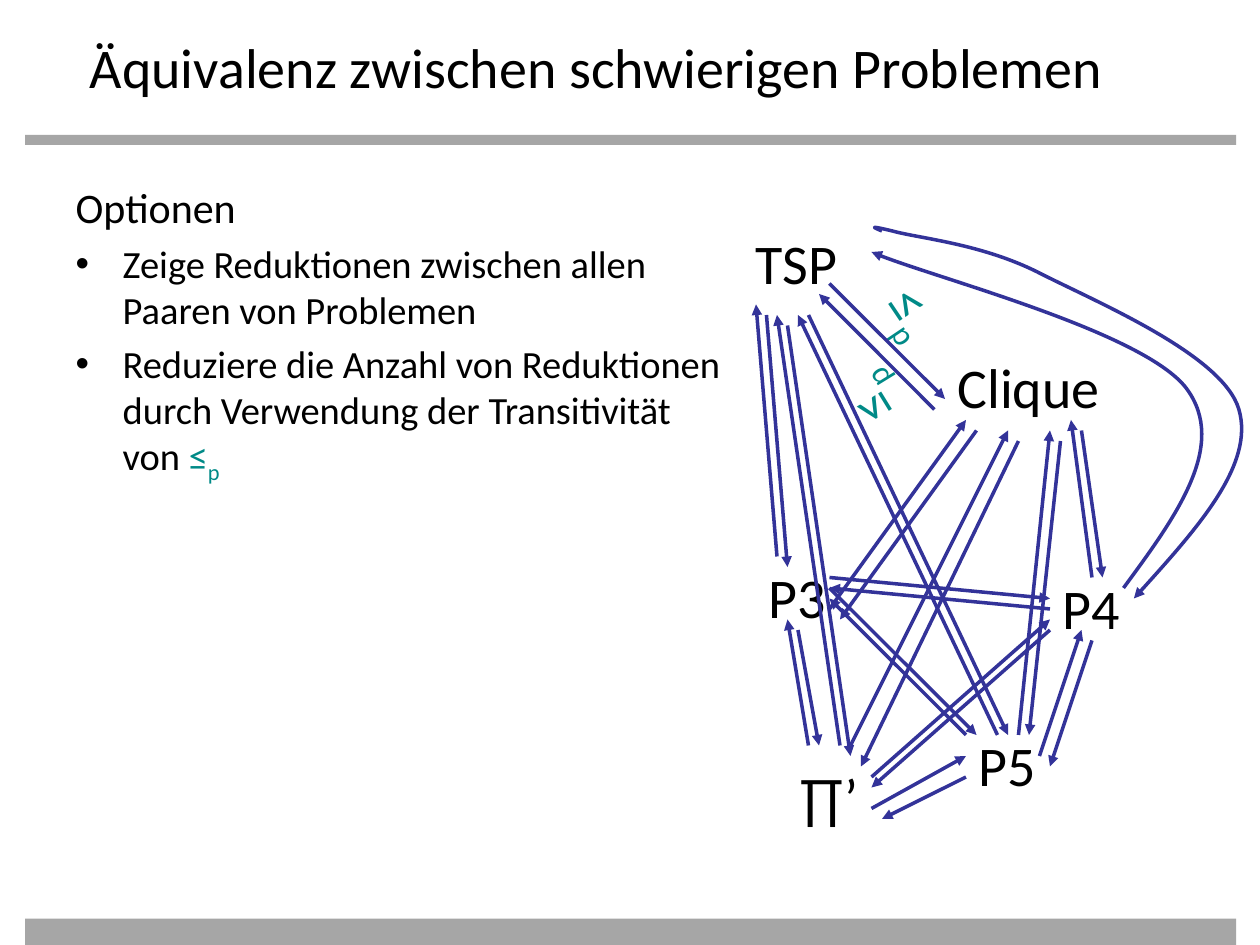
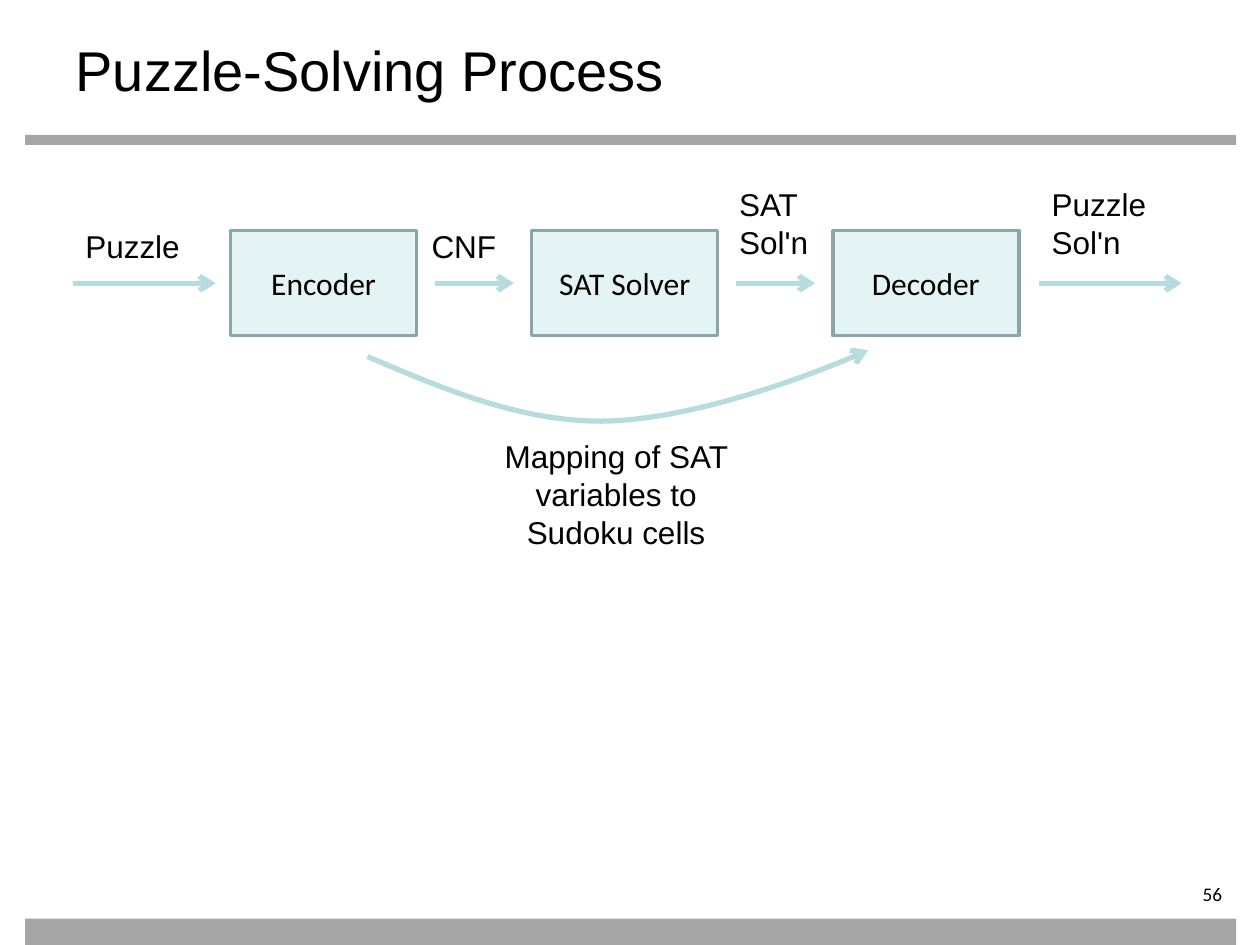
from pptx import Presentation
from pptx.dml.color import RGBColor
from pptx.enum import shapes, text
from pptx.oxml import ns, xmlchemy
from pptx.util import Cm, Pt

BLACK, GREY, NAVY, TEAL = "000000", "A6A6A6", "333399", "008A87"
STAGE_FILL, STAGE_EDGE, FLOW = "E4F3F4", "8AA6A8", "B6DCDF"
SANS, HUMANIST = "Arial", "Calibri"
GRID = 2.54 / 12  # cm per step of the reduction graph

# Label, left, top, width in grid steps
PROBLEMS = [
    ("TSP", -1.2, 3.2, 10.6), ("P3", 0, 35, 8), ("P4", 28, 36, 8),
    ("Clique", 18, 15, 16.7), ("P5", 20, 51, 8), ("∏’", 3, 54, 8.6),
]
# Left, top, width, rotation
RELATION_SIGNS = [(10.9, 9.7, 11.4, 56.1), (4.4, 15, 10.1, 238.4)]
# Each reduction: from x, y to x, y; listed with its reverse
REDUCTIONS = [
    (7, 9, 18, 20), (17, 21, 6, 10),
    (7, 40, 20, 22), (21, 23, 8, 41),
    (23, 52, 4, 12), (5, 12, 24, 52),
    (8, 53, 2, 12), (3, 13, 9, 54),
    (9, 53, 24, 23), (25, 24, 10, 55),
    (25, 52, 28, 23), (29, 24, 26, 52),
    (32, 37, 30, 22), (31, 23, 33, 37),
    (11, 59, 20, 54), (20, 56, 12, 60),
    (11, 56, 28, 41), (28, 42, 11, 57),
    (27, 54, 31, 42), (32, 43, 28, 55),
    (2, 35, 0, 11), (1, 12, 3, 36),
    (5, 53, 3, 41), (4, 42, 6, 53),
    (7, 38, 21, 52), (20, 52, 7, 39),
    (7, 37, 28, 39), (28, 40, 7, 38),
]
CURVED_REDUCTIONS = [
    [(35, 38), (40, 31.2), (45, 24.4), (41, 19),
     (37, 13.7), (16, 8.2), (11, 6)],
    [(12, 4), (11.3, 3.7), (10.5, 3.4), (13, 4),
     (15.5, 4.7), (21.5, 5.2), (27, 8),
     (32.5, 10.8), (44.5, 15.8), (46, 21),
     (47.5, 26.2), (41.8, 32.6), (36, 39)],
]


def colour(value):
    return RGBColor.from_string(value)


def format_font(font, size, name, value=BLACK):
    font.size, font.name = Pt(size), name
    font.color.rgb = colour(value)


def place(shape, left, top, width, height):
    shape.left, shape.top = Cm(left), Cm(top)
    shape.width, shape.height = Cm(width), Cm(height)


def subscript(span):
    span._r.get_or_add_rPr().set("baseline", "-25000")


def add_box(page, left, top, width, height, fill, edge=None):
    box = page.shapes.add_shape(shapes.MSO_SHAPE.RECTANGLE, Cm(left), Cm(top),
                                Cm(width), Cm(height))
    box.shadow.inherit = False
    box.fill.solid()
    box.fill.fore_color.rgb = colour(fill)
    if edge:
        box.line.color.rgb = colour(edge)
        box.line.width = Pt(2)
    else:
        box.line.fill.background()
    return box


def add_label(page, words, left, top, width, height, size, name,
              value=BLACK, align=text.PP_ALIGN.LEFT, wrap=True):
    label = page.shapes.add_textbox(Cm(left), Cm(top), Cm(width), Cm(height))
    frame = label.text_frame
    frame.word_wrap = wrap
    frame.text = words
    para = frame.paragraphs[0]
    para.alignment = align
    format_font(para.runs[0].font, size, name, value)
    return label


def style_arrow(line, properties, value, width, head):
    line.color.rgb = colour(value)
    line.width = Pt(width)
    tail = xmlchemy.OxmlElement("a:tailEnd")
    tail.set("type", head)
    properties.find(ns.qn("a:ln")).append(tail)


def add_arrow(page, start, end, value, width, head):
    arrow = page.shapes.add_connector(shapes.MSO_CONNECTOR.STRAIGHT,
                                      *map(Cm, (*start, *end)))
    properties = arrow._element.spPr
    style_arrow(arrow.line, properties, value, width, head)
    properties.append(xmlchemy.OxmlElement("a:effectLst"))


def add_curved_arrow(page, points, value, width, head):
    """Draw a chain of cubic curves: a start, then three points per curve."""
    start, *rest = [(Cm(x), Cm(y)) for x, y in points]
    builder = page.shapes.build_freeform(*start)
    builder.add_line_segments(rest, close=False)
    curve = builder.convert_to_shape()
    curve.shadow.inherit = False
    curve.fill.background()
    properties = curve._element.spPr
    outline = next(properties.iter(ns.qn("a:path")))
    segments = outline.findall(ns.qn("a:lnTo"))
    for first in range(0, len(segments), 3):
        bend = xmlchemy.OxmlElement("a:cubicBezTo")
        for segment in segments[first:first + 3]:
            bend.append(segment[0])
            outline.remove(segment)
        outline.append(bend)
    style_arrow(curve.line, properties, value, width, head)


def start_page(deck, layout, title, name, box):
    """Add a page with its two grey bands and its title."""
    page = deck.slides.add_slide(deck.slide_layouts[layout])
    for top, height in ((2.72, 0.2), (18.52, 0.53)):
        add_box(page, 0.51, top, 24.41, height, GREY)
    heading = page.shapes.title
    place(heading, *box)
    frame = heading.text_frame
    frame.text = title
    frame.auto_size = text.MSO_AUTO_SIZE.NONE
    frame.vertical_anchor = text.MSO_ANCHOR.TOP
    para = frame.paragraphs[0]
    para.alignment = text.PP_ALIGN.LEFT
    format_font(para.runs[0].font, 32, name)
    return page


def set_bullet(para, symbol):
    properties = para._p.get_or_add_pPr()
    indent = Cm(0.95) if symbol else 0
    properties.set("marL", str(indent))
    properties.set("indent", str(-indent))
    bullet = xmlchemy.OxmlElement("a:buChar" if symbol else "a:buNone")
    if symbol:
        bullet.set("char", symbol)
    properties.append(bullet)


def fill_options(body, left, top, width, height):
    place(body, left, top, width, height)
    frame = body.text_frame
    frame.text = "\n".join([
        "Optionen",
        "Zeige Reduktionen zwischen allen Paaren von Problemen",
        "Reduziere die Anzahl von Reduktionen durch Verwendung der "
        "Transitivität von ",
    ])
    frame.auto_size = text.MSO_AUTO_SIZE.NONE
    for number, para in enumerate(frame.paragraphs):
        para.space_before = Pt(4.5 if number else 0)
        set_bullet(para, "•" if number else "")
        format_font(para.runs[0].font, 22 if number else 24, HUMANIST)
    for symbol in "≤p":
        span = para.add_run()
        span.text = symbol
        format_font(span.font, 22, HUMANIST, TEAL)
    subscript(span)


def draw_reduction_graph(page, left, top):
    def spot(x, y):
        return left + x * GRID, top + y * GRID

    for words, x, y, width in PROBLEMS:
        add_label(page, words, *spot(x, y), width * GRID, 1.6, 32, HUMANIST,
                  wrap=False)
    for x, y, width, angle in RELATION_SIGNS:
        sign = add_label(page, "≤", *spot(x, y), width * GRID, 1.63, 32,
                         HUMANIST, TEAL)
        span = sign.text_frame.paragraphs[0].add_run()
        span.text = "p"
        format_font(span.font, 32, HUMANIST, TEAL)
        subscript(span)
        sign.rotation = angle
    for x1, y1, x2, y2 in REDUCTIONS:
        add_arrow(page, spot(x1, y1), spot(x2, y2), NAVY, 2, "triangle")
    for points in CURVED_REDUCTIONS:
        add_curved_arrow(page, [spot(*point) for point in points], NAVY, 2,
                         "triangle")


def draw_solving_flow(page, left, top):
    for number, words in enumerate(("Encoder", "SAT Solver", "Decoder")):
        stage = add_box(page, left + 3.18 + 6.07 * number, top + 1.04,
                        3.75, 2.12, STAGE_FILL, STAGE_EDGE)
        frame = stage.text_frame
        frame.text = words
        frame.vertical_anchor = text.MSO_ANCHOR.MIDDLE
        para = frame.paragraphs[0]
        para.alignment = text.PP_ALIGN.CENTER
        format_font(para.runs[0].font, 18, HUMANIST)
    # Label, its left, top and width, then the arrow's start and end
    for words, x, y, width, start, end in (
            ("Puzzle", 0, 0.84, 2.54, 0, 2.88),
            ("CNF", 6.98, 0.84, 2.13, 7.29, 8.89),
            ("SAT Sol'n", 13.18, 0, 2.13, 13.36, 14.96),
            ("Puzzle Sol'n", 19.48, 0, 2.54, 19.48, 22.35)):
        add_label(page, words, left + x, top + y, width, 1.02, 18, SANS)
        add_arrow(page, (left + start, top + 2.1), (left + end, top + 2.1),
                  FLOW, 3, "arrow")
    mapping = [(5.94, 3.58), (7.49, 4.24), (9.04, 4.9), (10.72, 4.88),
               (12.4, 4.85), (15.04, 3.91), (16.03, 3.45)]
    add_curved_arrow(page, [(left + x, top + y) for x, y in mapping],
                     FLOW, 3, "arrow")
    add_label(page, "Mapping of SAT variables to Sudoku cells",
              left + 8.26, top + 5.08, 5.38, 2.54, 18, SANS,
              align=text.PP_ALIGN.CENTER)


def add_page_number(page, number, left, top):
    label = add_label(page, number, left, top, 2.79, 0.56, 11, HUMANIST,
                      align=text.PP_ALIGN.RIGHT)
    frame = label.text_frame
    frame.margin_left = frame.margin_top = frame.margin_bottom = 0


def main():
    deck = Presentation()
    deck.slide_width, deck.slide_height = Cm(25.4), Cm(19.05)

    page = start_page(deck, 1, " Äquivalenz zwischen schwierigen Problemen",
                      HUMANIST, (1.3, 0.53, 22.86, 1.4))
    fill_options(page.placeholders[1], 1.27, 3.53, 13.67, 12.57)
    draw_reduction_graph(page, 15.24, 3.81)

    page = start_page(deck, 5, "Puzzle-Solving Process", SANS,
                      (1.27, 0.58, 22.86, 2.34))
    draw_solving_flow(page, 1.47, 3.61)
    add_page_number(page, "56", 22.1, 17.78)

    deck.save("out.pptx")


if __name__ == "__main__":
    main()
